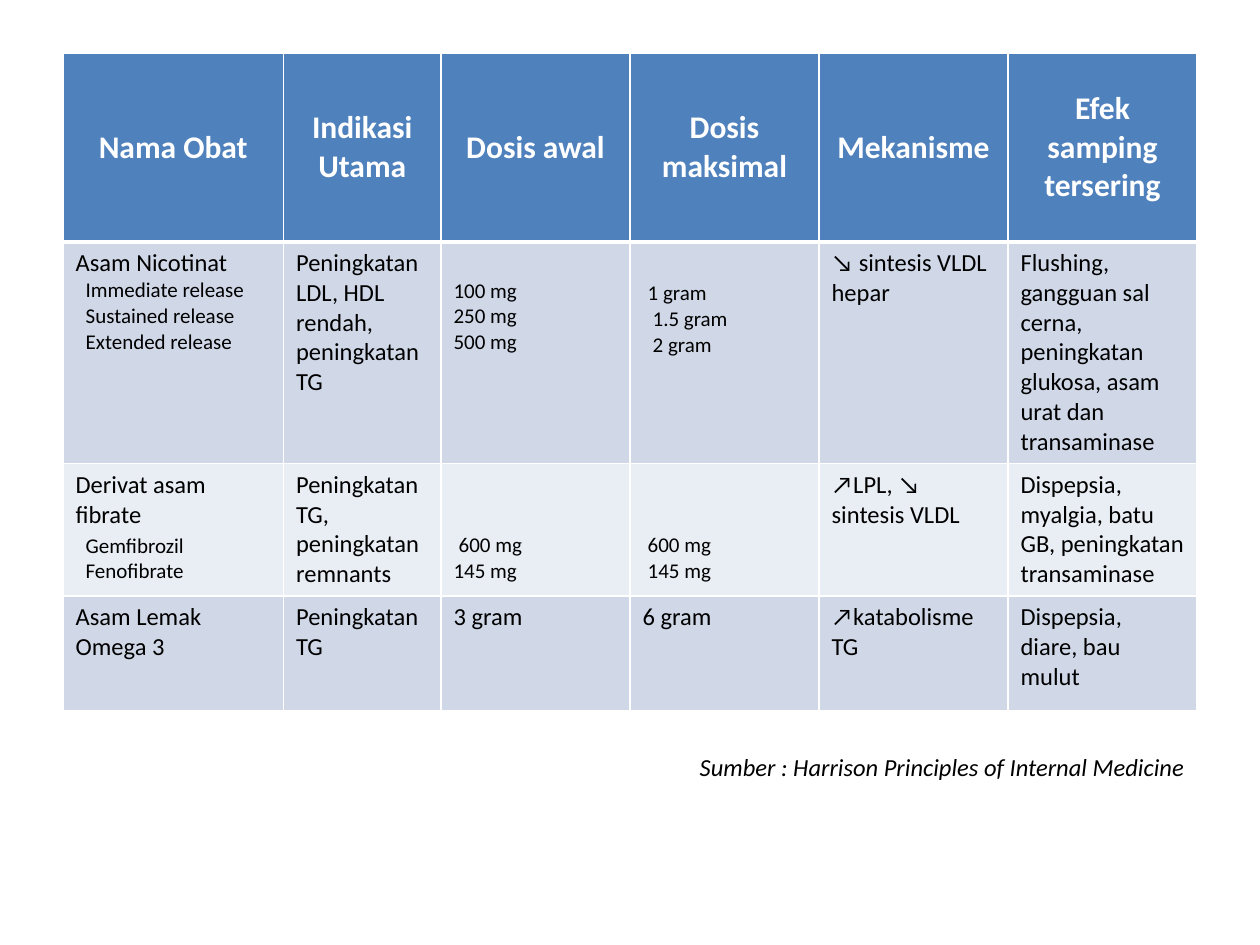
from lxml.etree import SubElement
from pptx import Presentation
from pptx.dml.color import RGBColor
from pptx.enum.text import MSO_ANCHOR as Anchor, PP_ALIGN as Align
from pptx.oxml.ns import qn
from pptx.util import Inches, Pt


def color(value):
    return RGBColor.from_string(value)


def write_paragraph(paragraph, text, indent=0, space_before=0, align=Align.LEFT, **font_format):
    if indent:
        paragraph._p.get_or_add_pPr().set("marL", str(Inches(indent)))
    paragraph.alignment = align
    paragraph.space_before = Pt(space_before)
    run = paragraph.add_run()
    run.text = text
    values = {"name": "Calibri", "size": Pt(14), "bold": False, "italic": False} | font_format
    font_color = values.pop("color", "000000")
    for name, value in values.items():
        setattr(run.font, name, value)
    run.font.color.rgb = color(font_color)


presentation = Presentation()
presentation.slide_width = Inches(10)
presentation.slide_height = Inches(7.5)
slide = presentation.slides.add_slide(presentation.slide_layouts[6])

column_widths = [1.75, 1.25, 1.5, 1.5, 1.5, 1.5]
row_heights = [1.5, 1.76, 1.05, 0.91]
row_fills = ["4F81BD", "D0D8E8", "E9EDF4", "D0D8E8"]
small = {"size": Pt(12)}
small_indented = small | {"indent": 0.08}
small_nudged = small | {"indent": 0.04}

rows = [
    ["Nama Obat", "Indikasi Utama", "Dosis awal", "Dosis maksimal", "Mekanisme",
     "Efek samping tersering"],
    [
        [("Asam Nicotinat", {}), ("Immediate release", small_indented),
         ("Sustained release", small_indented), ("Extended release", small_indented)],
        "Peningkatan LDL, HDL rendah, peningkatan TG",
        [("100 mg", small), ("250 mg", small), ("500 mg", small)],
        [("1 gram", small_nudged), ("1.5 gram", small_indented), ("2 gram", small_indented)],
        "↘ sintesis VLDL hepar",
        "Flushing, gangguan sal cerna, peningkatan glukosa, asam urat dan transaminase",
    ],
    [
        [("Derivat asam fibrate", {}), ("Gemfibrozil", small_indented | {"space_before": 2}),
         ("Fenofibrate", small_indented)],
        "Peningkatan TG, peningkatan remnants",
        [("600 mg", small_nudged), ("145 mg", small)],
        [("600 mg", small_nudged), ("145 mg", small_nudged)],
        "↗LPL, ↘ sintesis VLDL",
        "Dispepsia, myalgia, batu GB, peningkatan transaminase",
    ],
    ["Asam Lemak Omega 3", "Peningkatan TG", "3 gram", "6 gram", "↗katabolisme TG",
     "Dispepsia, diare, bau mulut"],
]
dose_top_margins = {(1, 2): 0.29, (1, 3): 0.31, (2, 2): 0.55, (2, 3): 0.55}

table = slide.shapes.add_table(
    len(rows), len(column_widths), Inches(0.5), Inches(0.42),
    Inches(sum(column_widths)), Inches(sum(row_heights))).table
for column, width in zip(table.columns, column_widths):
    column.width = Inches(width)
for row, height in zip(table.rows, row_heights):
    row.height = Inches(height)

for row_index, (row, fill) in enumerate(zip(rows, row_fills)):
    is_header = row_index == 0
    paragraph_format = (
        {"size": Pt(18), "bold": True, "color": "FFFFFF", "align": Align.CENTER}
        if is_header else {})
    thick_side = {0: "lnB", 1: "lnT"}.get(row_index)
    for column_index, content in enumerate(row):
        cell = table.cell(row_index, column_index)
        cell.vertical_anchor = Anchor.MIDDLE if is_header else Anchor.TOP
        cell.margin_top = Inches(dose_top_margins.get((row_index, column_index), 0.05))
        properties = cell._tc.get_or_add_tcPr()
        for side in ("lnL", "lnR", "lnT", "lnB"):
            width = Pt(3 if side == thick_side else 1)
            line = SubElement(properties, qn(f"a:{side}"), w=str(width))
            SubElement(SubElement(line, qn("a:solidFill")), qn("a:srgbClr"), val="FFFFFF")
        cell.fill.solid()
        cell.fill.fore_color.rgb = color(fill)
        lines = [(content, {})] if isinstance(content, str) else content
        frame = cell.text_frame
        for index, (text, line_format) in enumerate(lines):
            paragraph = frame.add_paragraph() if index else frame.paragraphs[0]
            write_paragraph(paragraph, text, **(paragraph_format | line_format))

source = slide.shapes.add_textbox(Inches(4.83), Inches(5.92), Inches(4.67), Inches(0.34))
source.text_frame.word_wrap = True
write_paragraph(source.text_frame.paragraphs[0],
                "Sumber : Harrison Principles of Internal Medicine",
                align=Align.RIGHT, italic=True)

presentation.save("out.pptx")
